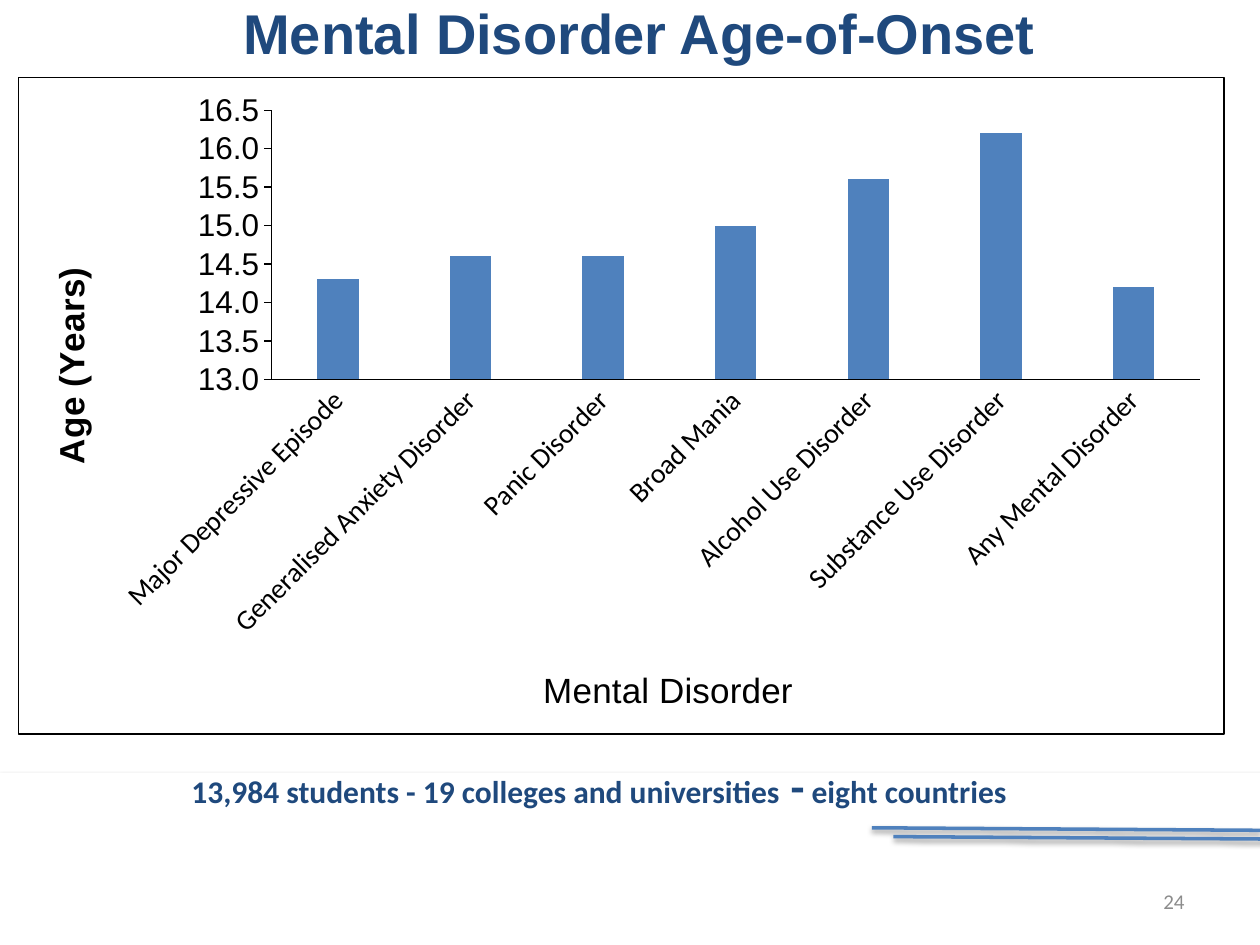
from dataclasses import dataclass

import pptx
import pptx.chart.data
import pptx.dml.color
import pptx.enum.chart
import pptx.enum.shapes
import pptx.enum.text
import pptx.oxml
import pptx.oxml.ns
import pptx.util
from pptx.util import Inches

NAVY, BLUE, BLACK, WHITE, GREY = "1F497D", "4F81BD", "000000", "FFFFFF", "8C8C8C"
ONSET_AGES = {
    "Major Depressive Episode": 14.3,
    "Generalised Anxiety Disorder": 14.6,
    "Panic Disorder": 14.6,
    "Broad Mania": 15.0,
    "Alcohol Use Disorder": 15.6,
    "Substance Use Disorder": 16.2,
    "Any Mental Disorder": 14.2,
}


@dataclass
class Stripe:
    left: float
    top: float


@dataclass
class AxisStyle:
    title: str
    title_bold: bool
    title_rotation: int
    title_x: float
    title_y: float
    label_font: str
    label_size: int
    label_rotation: int
    tick: pptx.enum.chart.XL_TICK_MARK


def rgb(color: str) -> pptx.dml.color.RGBColor:
    return pptx.dml.color.RGBColor.from_string(color)


def set_font(font, color: str, **values) -> None:
    for name, value in values.items():
        setattr(font, name, value)
    font.color.rgb = rgb(color)


def drawing_xml(body: str):
    return pptx.oxml.parse_xml(body.replace(
        "NS", pptx.oxml.ns.nsdecls("a", "c"), 1))


def add_shadow(shape, opacity: int) -> None:
    shape.element.spPr.append(drawing_xml(
        '<a:effectLst NS><a:outerShdw blurRad="39400" dist="22900" dir="5400000" '
        'rotWithShape="0"><a:srgbClr val="000000">'
        f'<a:alpha val="{opacity * 1000}"/></a:srgbClr></a:outerShdw></a:effectLst>'))


def place(element, index: int, mode_target: str, **parts: float) -> None:
    """Give a chart part a manual layout in fractions of the chart."""
    for old in element.findall(pptx.oxml.ns.qn("c:layout")):
        element.remove(old)
    values = "".join(f'<c:{name} val="{value}"/>' for name, value in parts.items())
    element.insert(index, drawing_xml(
        f'<c:layout NS><c:manualLayout>{mode_target}<c:xMode val="edge"/>'
        f'<c:yMode val="edge"/>{values}</c:manualLayout></c:layout>'))


def draw_footer_band(slide) -> None:
    band = slide.shapes.add_shape(pptx.enum.shapes.MSO_SHAPE.RECTANGLE,
                                  Inches(0), Inches(6.14), Inches(10), Inches(1.67))
    band.fill.solid()
    band.fill.fore_color.rgb = rgb(WHITE)
    band.line.color.rgb = rgb(WHITE)
    band.line.width = pptx.util.Pt(0.75)
    add_shadow(band, 35)


def draw_stripe(slide, stripe: Stripe) -> None:
    line = slide.shapes.add_connector(
        pptx.enum.shapes.MSO_CONNECTOR.STRAIGHT, Inches(stripe.left), Inches(stripe.top),
        Inches(stripe.left + 3.08), Inches(stripe.top + 0.02))
    line.line.color.rgb = rgb(BLUE)
    line.line.width = pptx.util.Pt(2)
    add_shadow(line, 38)


def style_axis(axis, style: AxisStyle) -> None:
    axis.has_major_gridlines = False
    axis.major_tick_mark = style.tick
    axis.minor_tick_mark = pptx.enum.chart.XL_TICK_MARK.NONE
    axis.format.line.color.rgb = rgb(BLACK)
    axis.format.line.width = pptx.util.Pt(0.75)
    set_font(axis.tick_labels.font, BLACK, name=style.label_font,
             size=pptx.util.Pt(style.label_size))

    frame = axis.axis_title.text_frame
    frame.text = style.title
    set_font(frame.paragraphs[0].runs[0].font, BLACK, name="Arial",
             size=pptx.util.Pt(20), bold=style.title_bold)
    title = axis.axis_title.element
    title_body = next(title.iter(pptx.oxml.ns.qn("a:bodyPr")))
    title_body.set("rot", str(style.title_rotation * 60000))
    title_body.set("vert", "horz")
    place(title, 1, "", x=style.title_x, y=style.title_y)

    label_text = title.getparent().find(pptx.oxml.ns.qn("c:txPr"))
    label_text.find(pptx.oxml.ns.qn("a:bodyPr")).set(
        "rot", str(style.label_rotation * 60000))


def draw_onset_chart(slide) -> None:
    data = pptx.chart.data.CategoryChartData(number_format="#,##0.0")
    data.categories = list(ONSET_AGES)
    data.add_series("Series 1", list(ONSET_AGES.values()))
    chart = slide.shapes.add_chart(
        pptx.enum.chart.XL_CHART_TYPE.COLUMN_CLUSTERED,
        Inches(0.14), Inches(0.61), Inches(9.58), Inches(5.22), data).chart
    chart.has_legend = False
    chart.has_title = False
    set_font(chart.font, BLACK, name="Calibri", size=pptx.util.Pt(10))

    columns = chart.plots[0]
    for name, value in {"gap_width": 219, "overlap": -27,
                        "vary_by_categories": False}.items():
        setattr(columns, name, value)
    fill = columns.series[0].format.fill
    fill.solid()
    fill.fore_color.rgb = rgb(BLUE)

    ages = chart.value_axis
    for name, value in {"minimum_scale": 13, "maximum_scale": 16.5,
                        "major_unit": 0.5}.items():
        setattr(ages, name, value)
    ages.tick_labels.number_format = "#,##0.0"
    ages.tick_labels.number_format_is_linked = False
    ticks = pptx.enum.chart.XL_TICK_MARK
    style_axis(chart.category_axis, AxisStyle(
        "Mental Disorder", False, 0, 0.43, 0.89, "Calibri", 16, -45, ticks.NONE))
    style_axis(ages, AxisStyle(
        "Age (Years)", True, -90, 0.02, 0.28, "Arial", 18, 0, ticks.OUTSIDE))

    chart_part = chart.element.find(pptx.oxml.ns.qn("c:chart"))
    place(chart_part.find(pptx.oxml.ns.qn("c:plotArea")), 0,
          '<c:layoutTarget val="inner"/>', x=0.21, y=0.05, w=0.77, h=0.41)
    chart_part.addnext(drawing_xml(
        f'<c:spPr NS><a:solidFill><a:srgbClr val="{WHITE}"/></a:solidFill>'
        f'<a:ln w="9525"><a:solidFill><a:srgbClr val="{BLACK}"/></a:solidFill></a:ln>'
        '</c:spPr>'))


def draw_title(slide) -> None:
    title = slide.shapes.title
    for name, value in {"left": 0.65, "top": -0.11, "width": 8.85, "height": 0.73}.items():
        setattr(title, name, Inches(value))
    title.text_frame.text = "Mental Disorder Age-of-Onset"
    title.text_frame.vertical_anchor = pptx.enum.text.MSO_ANCHOR.MIDDLE
    heading = title.text_frame.paragraphs[0]
    heading.alignment = pptx.enum.text.PP_ALIGN.CENTER
    set_font(heading.runs[0].font, NAVY, name="Arial", size=pptx.util.Pt(32), bold=True)


def draw_sample_note(slide) -> None:
    frame = slide.shapes.add_textbox(
        Inches(1.36), Inches(5.94), Inches(7.42), Inches(0.57)).text_frame
    frame.word_wrap = True
    frame.auto_size = pptx.enum.text.MSO_AUTO_SIZE.SHAPE_TO_FIT_TEXT
    frame.margin_left = Inches(0.16)
    note = frame.paragraphs[0]
    note.line_spacing = 1.07
    note.space_after = pptx.util.Pt(8)
    for text, size in (("13,984 students - 19 colleges and universities", 18),
                       (" -", 26), (" eight countries", 18)):
        run = note.add_run()
        run.text = text
        set_font(run.font, NAVY, name="Calibri", size=pptx.util.Pt(size), bold=True)


def draw_page_number(slide) -> None:
    frame = slide.shapes.add_textbox(
        Inches(7.17), Inches(6.95), Inches(2.33), Inches(0.4)).text_frame
    frame.word_wrap = True
    frame.vertical_anchor = pptx.enum.text.MSO_ANCHOR.MIDDLE
    frame.text = "24"
    number = frame.paragraphs[0]
    number.alignment = pptx.enum.text.PP_ALIGN.RIGHT
    set_font(number.runs[0].font, GREY, name="Calibri", size=pptx.util.Pt(12))


def main() -> None:
    deck = pptx.Presentation()
    deck.slide_width, deck.slide_height = Inches(10), Inches(7.5)
    slide = deck.slides.add_slide(deck.slide_layouts[5])
    draw_footer_band(slide)
    for stripe in (Stripe(6.92, 6.57), Stripe(7.09, 6.64)):
        draw_stripe(slide, stripe)
    draw_title(slide)
    draw_page_number(slide)
    draw_onset_chart(slide)
    draw_sample_note(slide)
    deck.save("out.pptx")


if __name__ == "__main__":
    main()
